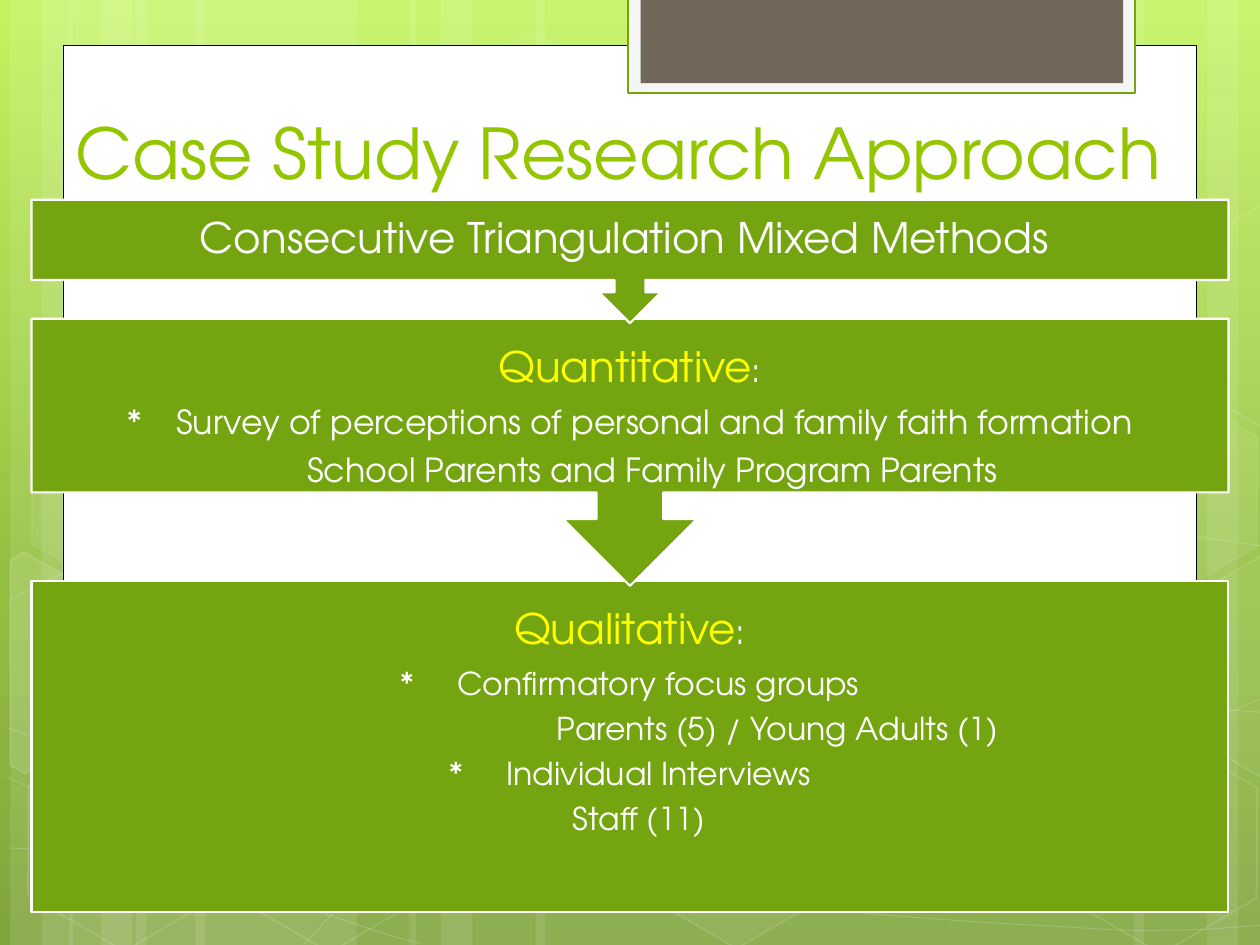
from copy import deepcopy
from dataclasses import dataclass
from math import cos, radians, sin
from lxml.etree import SubElement
from pptx import Presentation
from pptx.dml.color import RGBColor
from pptx.enum.shapes import MSO_SHAPE
from pptx.enum.text import MSO_ANCHOR, PP_ALIGN
from pptx.oxml.ns import qn
from pptx.util import Inches, Pt


@dataclass(frozen=True)
class Theme:
    font: str = "TeX Gyre Adventor"
    white: str = "FFFFFF"
    black: str = "000000"
    green: str = "74A510"
    lime: str = "94C600"
    yellow: str = "FFFF00"
    pale: str = "F5F5F5"
    brown: str = "71685A"
    sky: tuple = ((0, "C3F35F"), (0.62, "93BF3F"), (1, "81A53E"))
    title: int = 40
    head: int = 24
    mid: int = 20
    body: int = 19
    small: int = 18


T = Theme()
WIDE, HIGH = Inches(10), Inches(7.5)
COLS = 100
TURN = 30

BANDS = [(10.8, 17.5), (0.8, 5), (3.3, 8.3), (15.5, 17.5), (5.5, 5), (8, 8.3),
         (73.3, 17.5), (95.8, 5), (90, 8.3), (42.5, 30.8), (32.5, 5), (35, 8.3)]
CURVES = [
    [(0.7, 67.3), (6.1, 67.6), (11.5, 67.9), (19, 67.8), (26.5, 67.7), (35.8, 67.5),
     (45.8, 66.5), (55.8, 65.5), (70, 63.6), (79.2, 61.7), (88.3, 59.8), (97.7, 56.8),
     (100.7, 55.1)],
    [(0.7, 47.7), (3.6, 46.1), (6.5, 44.6), (12.1, 43.1), (17.8, 41.6), (25.9, 39.4),
     (34.7, 38.7), (43.6, 38), (54.4, 37.9), (65.4, 38.7), (76.4, 39.5), (94.7, 42.6),
     (100.7, 43.4)],
    [(0.6, 61.7), (12.7, 67.2), (24.7, 72.7), (33.4, 74.9)],
    [(0.7, 57.8), (3.8, 58.9), (7, 60), (12.8, 61.6), (18.6, 63.1), (27.3, 65.6),
     (35.7, 67.3), (44, 69), (54.5, 70.8), (62.8, 71.8), (71.1, 72.9), (80, 73.3),
     (85.3, 73.6), (90.5, 74), (91.9, 73.8), (94.5, 73.8), (97.1, 73.7), (98.9, 73.5),
     (100.7, 73.4)],
    [(24.2, 74.9), (26, 72.9), (27.8, 70.9), (30.2, 69.1), (32.6, 67.3), (36, 65.3),
     (38.8, 63.9), (41.6, 62.5), (43.3, 61.9), (47, 60.9), (50.6, 59.9), (57.3, 58.5),
     (60.8, 57.8), (64.4, 57.1), (64.9, 57.1), (68, 56.9), (71.1, 56.6), (76, 56.3),
     (79.4, 56.2), (82.9, 56.1), (88.6, 56.2), (95.3, 56.2), (97.1, 56.3), (98.8, 56.4),
     (100.6, 56.6)],
]
CELLS = [(33.4, 3.6, 4, 8), (49.7, 58.9, 6, 12), (1.1, 59.1, 0, 12),
         (1.4, 31.2, 7, 8), (17.4, 59.2, 0, 12), (75.3, 45.3, 10, 12),
         (83.4, 59.3, 0, 12), (83.4, 31.4, 7, 8)]
EDGE = [(92.6, 48.5), (100.1, 44.1), (100.9, 44.6), (100.9, 61.3),
        (100.2, 61.7), (92.6, 57.3)]
CUTS = [([(0.8, 44.5), (1.9, 43.8), (9.6, 48.2), (9.5, 57), (2, 61.4), (0.8, 60.7)],
         (3.6, 53.5), 10),
        (EDGE, (98.5, 52), 4),
        ([(x, y - 27.8) for x, y in EDGE], (98.5, 24.2), 0)]


def unit(n):
    return round(WIDE * n / COLS)


def tint(part, share):
    for tone in part.iter(qn("a:srgbClr")):
        SubElement(tone, qn("a:alpha"), val=str(share * 1000))


def paint(shape, fill=None, line=None, width=1, clear=None, veil=None):
    shape.shadow.inherit = False
    if fill:
        shape.fill.solid()
        shape.fill.fore_color.rgb = RGBColor.from_string(fill)
        if clear:
            tint(shape._element.spPr.find(qn("a:solidFill")), clear)
    else:
        shape.fill.background()
    if line:
        shape.line.color.rgb = RGBColor.from_string(line)
        shape.line.width = Pt(width)
        if veil:
            tint(shape._element.spPr.find(qn("a:ln")), veil)
    else:
        shape.line.fill.background()
    return shape


def block(slide, kind, *grid):
    return slide.shapes.add_shape(kind, *map(unit, grid))


def trace(slide, dots, close):
    dots = [(unit(x), unit(y)) for x, y in dots]
    pen = slide.shapes.build_freeform(*dots[0], scale=1)
    pen.add_line_segments(dots[1:], close=close)
    return pen.convert_to_shape()


def curve(slide, knots):
    shape = trace(slide, knots, False)
    track = shape._element.find(".//" + qn("a:path"))
    legs = track.findall(qn("a:lnTo"))
    for i in range(0, len(legs), 3):
        arc = SubElement(track, qn("a:cubicBezTo"))
        for leg in legs[i:i + 3]:
            arc.append(leg[0])
            track.remove(leg)
    return shape


def turn(dots, mid):
    c, s = cos(radians(TURN)), sin(radians(TURN))
    gaps = [(x - mid[0], y - mid[1]) for x, y in dots]
    return [(mid[0] + x * c + y * s, mid[1] - x * s + y * c) for x, y in gaps]


def shade(slide):
    fill = slide.background.fill
    fill.gradient()
    fill.gradient_angle = 270
    stops = slide._element.find(".//" + qn("a:gsLst"))
    stops.append(deepcopy(stops[-1]))
    for stop, (place, tone) in zip(fill.gradient_stops, T.sky):
        stop.position = place
        stop.color.rgb = RGBColor.from_string(tone)


def decor(slide):
    for left, width in BANDS:
        paint(block(slide, MSO_SHAPE.RECTANGLE, left, 0, width, 75), T.white, clear=10)
    for knots in CURVES:
        paint(curve(slide, knots), line=T.white, width=0.5, veil=20)
    for left, top, clear, veil in CELLS:
        cell = block(slide, MSO_SHAPE.HEXAGON, left, top, 17.5, 15.2)
        cell.adjustments[0] = 0.285
        cell.rotation = TURN
        paint(cell, T.white if clear else None, T.white, 1, clear, veil)
    for dots, mid, clear in CUTS:
        cut = trace(slide, turn(dots, mid), True)
        cut.rotation = TURN
        paint(cut, T.white if clear else None, T.white, 1, clear, 12)


def frame(slide):
    rect = MSO_SHAPE.RECTANGLE
    paint(block(slide, rect, 5, 3.6, 90, 67.6), T.white, T.black, 0.5)
    paint(block(slide, rect, 49.85, -0.2, 40.2, 7.6), T.pale, T.green, 1.25)
    paint(block(slide, rect, 50.85, -0.2, 38.3, 6.8), T.brown)


def write(para, text, size, tone=T.white):
    run = para.add_run()
    run.text = text
    run.font.name = T.font
    run.font.size = Pt(size)
    run.font.color.rgb = RGBColor.from_string(tone)


def stage(slide, kind, top, height, side, lead, head, rows=(), size=T.body):
    box = paint(block(slide, kind, 2.5, top, 95, height), T.green, T.white, 1.25)
    text = box.text_frame
    text.word_wrap = True
    text.vertical_anchor = MSO_ANCHOR.TOP
    text.margin_left = text.margin_right = unit(side)
    text.margin_top, text.margin_bottom = unit(lead), 0
    para = text.paragraphs[0]
    para.alignment = PP_ALIGN.CENTER
    para.line_spacing = 0.9
    para.space_after = Pt(T.head * 0.35)
    for part in head:
        write(para, *part)
    for words, left, hang in rows:
        para = text.add_paragraph()
        para.alignment = PP_ALIGN.LEFT
        para.line_spacing = 0.9
        para.space_after = Pt(size * 0.35)
        props = para._p.get_or_add_pPr()
        props.set("marL", str(unit(left)))
        props.set("indent", str(-unit(hang)))
        write(para, words, size)


def flow(slide):
    arrow = MSO_SHAPE.DOWN_ARROW_CALLOUT
    stage(slide, MSO_SHAPE.RECTANGLE, 46.1, 26.3, 1.9, 2.2,
          [("Qualitative", T.head, T.yellow), (":", T.mid)],
          [("*\tConfirmatory focus groups", 31.9, 4.5),
           ("Parents (5) / Young Adults (1)", 39.8, 0),
           ("*\tIndividual Interviews", 35.8, 4.5),
           ("Staff (11)", 41.05, 0)], T.small)
    stage(slide, arrow, 25.3, 21.2, 1.5, 2.18,
          [("Quantitative", T.head, T.yellow), (":", T.body)],
          [("*\tSurvey of perceptions of personal and family faith formation", 10, 3.9),
           ("School Parents and Family Program Parents", 20.4, 0)])
    stage(slide, arrow, 15.85, 9.8, 1.9, 1.35,
          [("Consecutive Triangulation Mixed Methods ", T.head)])


def title(slide):
    head = slide.shapes.title
    head.left, head.top, head.width, head.height = map(unit, (5, 3.35, 90, 12.5))
    text = head.text_frame
    text.word_wrap = True
    text.vertical_anchor = MSO_ANCHOR.BOTTOM
    para = text.paragraphs[0]
    para.alignment = PP_ALIGN.LEFT
    write(para, "Case Study Research Approach", T.title, T.lime)
    slide.shapes._spTree.append(head._element)


def main():
    deck = Presentation()
    deck.slide_width, deck.slide_height = WIDE, HIGH
    slide = deck.slides.add_slide(deck.slide_layouts[5])
    shade(slide)
    decor(slide)
    frame(slide)
    flow(slide)
    title(slide)
    deck.save("out.pptx")


if __name__ == "__main__":
    main()
